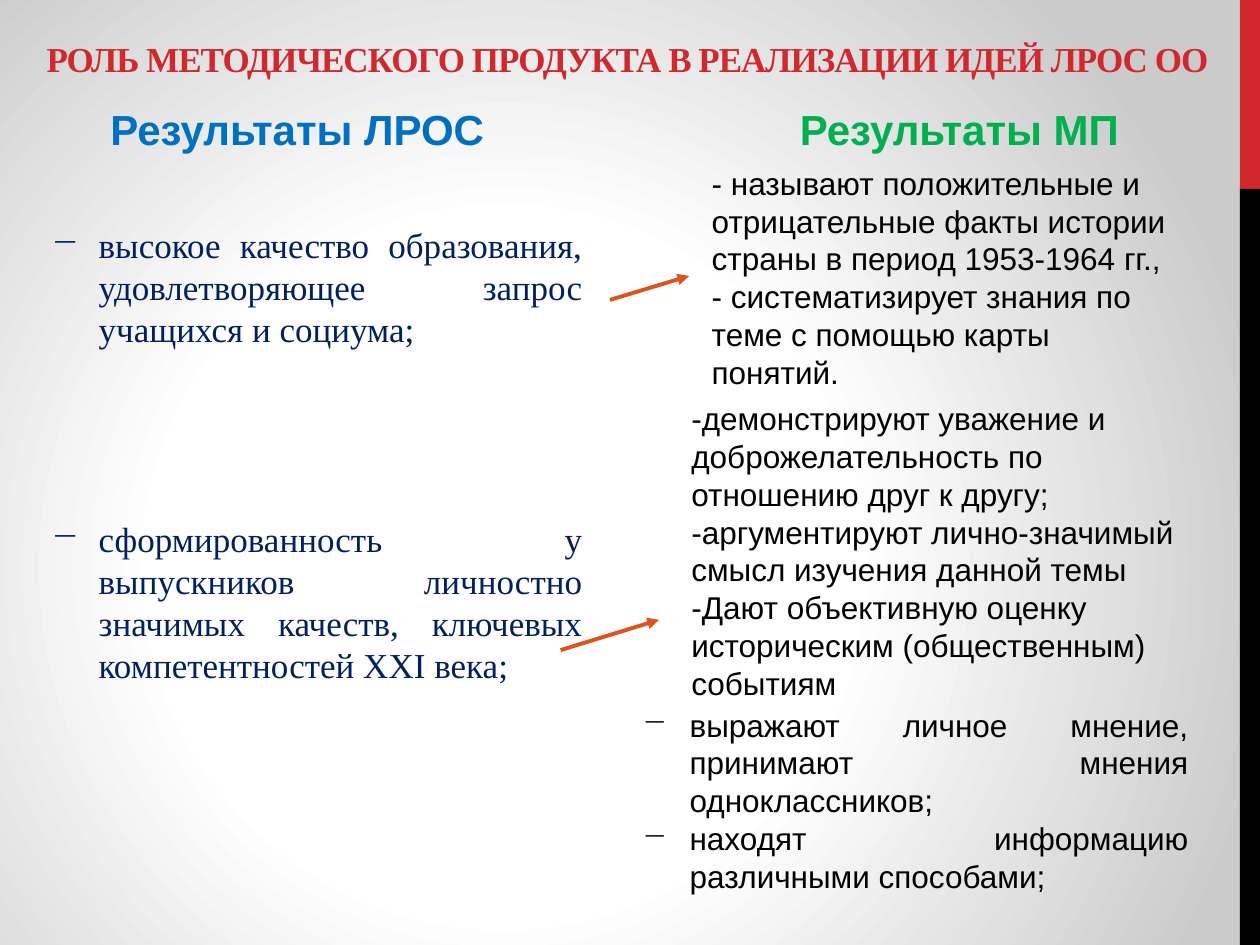
from lxml import etree
from pptx import Presentation
from pptx import util as u
from pptx.dml.color import RGBColor
from pptx.enum import shapes, text
from pptx.oxml import parse_xml
from pptx.oxml.ns import qn

COLORS = {
    "red": "D1282E", "black": "000000", "blue": "0070C0", "green": "00B050",
    "navy": "002060", "orange": "DC551F", "white": "FFFFFF", "grey": "CBCBCB",
}
NAMESPACES = (
    'xmlns:a="http://schemas.openxmlformats.org/drawingml/2006/main" '
    'xmlns:p="http://schemas.openxmlformats.org/presentationml/2006/main"'
)
TITLE = {"name": "Times New Roman", "size": u.Pt(20), "bold": True}
HEADING = {"name": "Arial", "size": u.Pt(24), "bold": True}
GOAL = {"name": "Times New Roman", "size": u.Pt(20)}
RESULT = {"name": "Arial", "size": u.Pt(18)}
BULLET_INDENT = 27


class SlideBuilder:
    """Holds the palette and the current slide and draws its elements."""

    def __init__(self, slide, colors):
        self.slide = slide
        self.colors = colors

    def color(self, name):
        return RGBColor.from_string(self.colors[name])

    def background(self, stops):
        stop_xml = "".join(
            f'<a:gs pos="{position * 1000}"><a:srgbClr val="{self.colors[name]}"/></a:gs>'
            for position, name in stops
        )
        background = parse_xml(
            f"<p:bg {NAMESPACES}><p:bgPr><a:gradFill><a:gsLst>{stop_xml}</a:gsLst>"
            '<a:path path="circle"><a:fillToRect l="40000" t="60000" r="60000" b="40000"/>'
            "</a:path></a:gradFill><a:effectLst/></p:bgPr></p:bg>"
        )
        self.slide.element.cSld.insert(0, background)

    def bar(self, box, color):
        shape = self.slide.shapes.add_shape(
            shapes.MSO_SHAPE.RECTANGLE, *(u.Pt(length) for length in box))
        shape.shadow.inherit = False
        shape.fill.solid()
        shape.fill.fore_color.rgb = self.color(color)
        shape.line.fill.background()

    def text_box(self, box, paragraphs, font, bulleted=False, gap=0, before=0,
                 tab=None, tracking=None, anchor=text.MSO_ANCHOR.TOP):
        shape = self.slide.shapes.add_textbox(*(u.Pt(length) for length in box))
        frame = shape.text_frame
        frame.word_wrap = True
        frame.vertical_anchor = anchor
        for index, runs in enumerate(paragraphs):
            paragraph = frame.paragraphs[0] if index == 0 else frame.add_paragraph()
            paragraph.line_spacing = u.Pt(font["size"].pt * 1.2)
            paragraph.space_before = u.Pt(gap if index else before)
            if bulleted:
                self.bullet(paragraph)
            if tab:
                tabs = etree.SubElement(paragraph._p.get_or_add_pPr(), qn("a:tabLst"))
                etree.SubElement(tabs, qn("a:tab"), pos=str(u.Pt(tab)), algn="l")
            for content, color in runs:
                run = paragraph.add_run()
                run.text = content
                for name, value in font.items():
                    setattr(run.font, name, value)
                run.font.color.rgb = self.color(color)
                if tracking:
                    run._r.get_or_add_rPr().set("spc", str(tracking))

    def bullet(self, paragraph):
        paragraph.alignment = text.PP_ALIGN.JUSTIFY
        properties = paragraph._p.get_or_add_pPr()
        properties.set("marL", str(u.Pt(BULLET_INDENT)))
        properties.set("indent", str(-u.Pt(BULLET_INDENT)))
        etree.SubElement(properties, qn("a:buChar"), char="−")

    def arrow(self, start, end, color):
        connector = self.slide.shapes.add_connector(
            shapes.MSO_CONNECTOR.STRAIGHT, *(u.Pt(length) for length in start + end))
        connector.line.width = u.Pt(2.25)
        connector.line.color.rgb = self.color(color)
        etree.SubElement(connector.line._get_or_add_ln(), qn("a:tailEnd"), type="triangle")
        etree.SubElement(connector._element.spPr, qn("a:effectLst"))


def main():
    presentation = Presentation()
    presentation.slide_width, presentation.slide_height = u.Pt(720), u.Pt(540)
    slide = presentation.slides.add_slide(presentation.slide_layouts[6])
    builder = SlideBuilder(slide, COLORS)

    builder.background([(0, "white"), (44, "white"), (100, "grey")])
    builder.bar((708.5, 0, 11.5, 108), "red")
    builder.bar((708.5, 108, 11.5, 432), "black")

    builder.text_box(
        (19.5, 3.6, 680.5, 45.4),
        [[("РОЛЬ МЕТОДИЧЕСКОГО ПРОДУКТА В РЕАЛИЗАЦИИ ИДЕЙ ЛРОС ОО", "red")]],
        TITLE, tracking=-60, anchor=text.MSO_ANCHOR.BOTTOM)
    builder.text_box(
        (56, 55.5, 629.5, 39.5),
        [[("Результаты ЛРОС\t", "blue"), ("Результаты МП", "green")]],
        HEADING, before=2, tab=394)

    builder.text_box(
        (22.3, 124, 317.5, 317.5),
        [[("высокое качество образования, удовлетворяющее запрос учащихся и социума;", "navy")],
         [("сформированность у выпускников личностно значимых качеств, "
           "ключевых компетентностей XXI века;", "navy")]],
        GOAL, bulleted=True, gap=96)

    builder.arrow((320.4, 371.5), (376.6, 354.2), "orange")
    builder.arrow((348.5, 171.4), (393.8, 157.7), "orange")

    builder.text_box(
        (388, 224.6, 292.3, 203.8),
        [[("-демонстрируют уважение и доброжелательность по отношению друг к другу;", "black")],
         [("-аргументируют лично-значимый смысл изучения данной темы", "black")],
         [("-Дают объективную оценку историческим (общественным) событиям", "black")]],
        RESULT)
    builder.text_box(
        (399.6, 90, 281.5, 181.4),
        [[("- называют положительные и отрицательные факты истории страны "
           "в период 1953-1964 гг.,", "black")],
         [("- систематизирует знания по теме с помощью карты понятий.", "black")]],
        RESULT)
    builder.text_box(
        (360, 399.6, 326.2, 116.6),
        [[("выражают личное мнение, принимают мнения одноклассников;", "black")],
         [("находят информацию различными способами;", "black")]],
        RESULT, bulleted=True)

    presentation.save("out.pptx")


if __name__ == "__main__":
    main()
